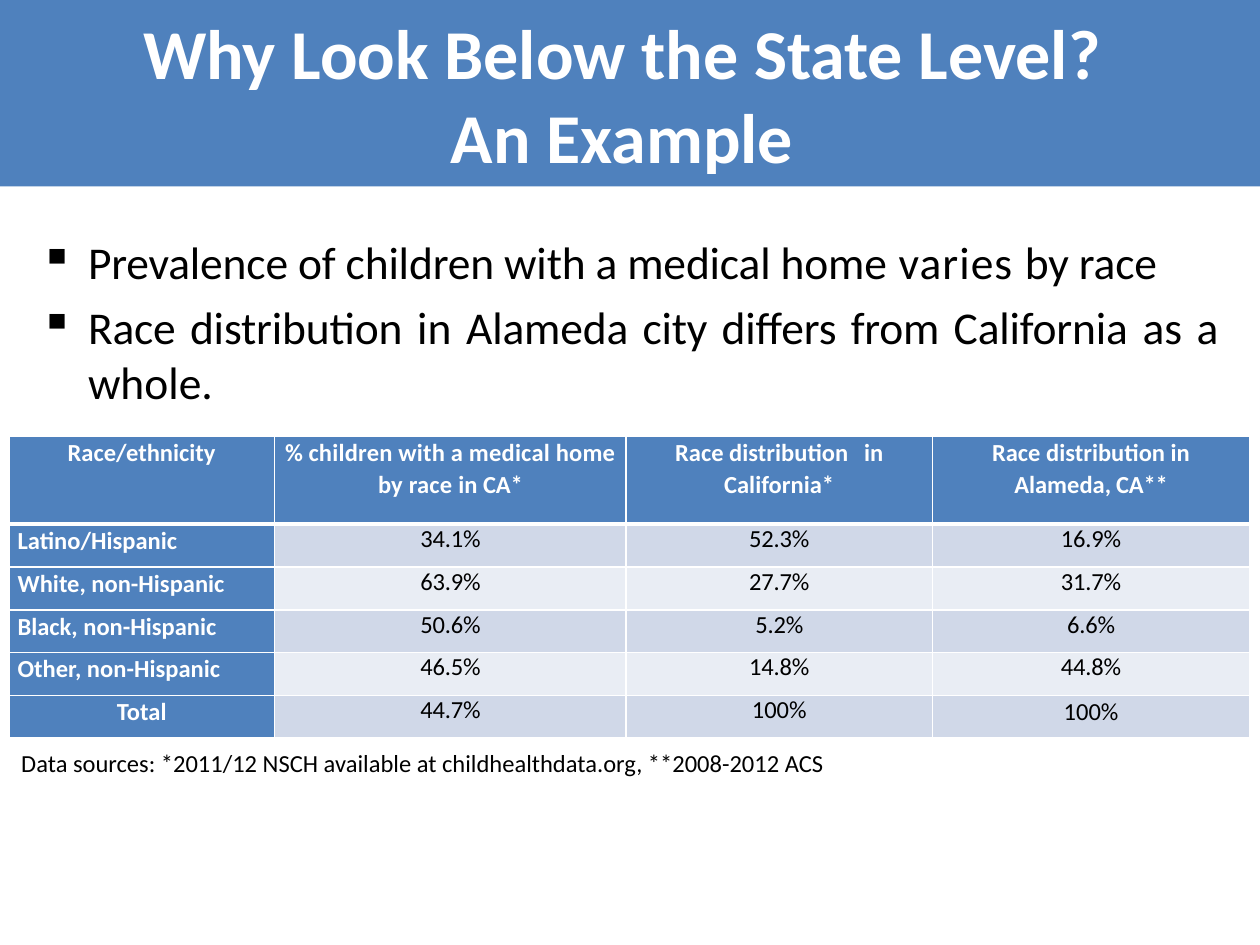
from pptx import Presentation
from pptx.dml.color import RGBColor
from pptx.enum.shapes import MSO_SHAPE as Shape
from pptx.enum.text import MSO_ANCHOR as Anchor, PP_ALIGN as Align
from pptx.oxml import parse_xml
from pptx.oxml.ns import nsdecls
from pptx.util import Inches, Pt

BLUE = RGBColor(0x4F, 0x81, 0xBD)
WHITE = RGBColor(0xFF, 0xFF, 0xFF)
BLACK = RGBColor(0, 0, 0)
DARK = RGBColor(0xD0, 0xD8, 0xE8)
LIGHT = RGBColor(0xE9, 0xED, 0xF4)


def add_run(para, text, size, color, bold=False, space=0):
    run = para.add_run()
    run.text = text
    font = run.font
    font.name, font.size, font.bold = "Calibri", Pt(size), bold
    font.color.rgb = color
    if space:
        run._r.get_or_add_rPr().set("spc", str(round(space * 100)))


def add_box(left, top, width, height):
    frame = slide.shapes.add_textbox(
        Inches(left), Inches(top), Inches(width), Inches(height)).text_frame
    frame.word_wrap = True
    return frame


deck = Presentation()
deck.slide_width, deck.slide_height = Inches(10), Inches(7.5)
slide = deck.slides.add_slide(deck.slide_layouts[6])

# Title band
band = slide.shapes.add_shape(
    Shape.RECTANGLE, Inches(0), Inches(0), Inches(10), Inches(1.48))
band.shadow.inherit = False
band.fill.solid()
band.fill.fore_color.rgb = BLUE
band.line.fill.background()
band.text_frame.vertical_anchor = Anchor.MIDDLE
para = band.text_frame.paragraphs[0]
para.alignment = Align.CENTER
add_run(para, "Why Look Below the State Level? ", 40, WHITE, True)
para.add_line_break()
add_run(para, "An Example ", 40, WHITE, True)

# Table
HEADS = [
    [("Race/ethnicity", 0)],
    [("% ", 0), ("children with a medical home by race ", 0.1),
     ("in ", 0), ("CA*", -0.1)],
    [("Race distribution\tin California*", 0)],
    [("Race distribution in Alameda", 0), (", CA", -0.2), ("**", -0.1)],
]
ROWS = [
    ("Latino/Hispanic", "34.1%", "52.3%", "16.9%"),
    ("White, non-Hispanic", "63.9%", "27.7%", "31.7%"),
    ("Black, non-Hispanic", "50.6%", "5.2%", "6.6%"),
    ("Other, non-Hispanic", "46.5%", "14.8%", "44.8%"),
    ("Total", "44.7%", "100%", "100%"),
]
grid = [HEADS] + [[[(text, 0 if n == 0 or text == "100%" else -0.1)]
                   for n, text in enumerate(row)] for row in ROWS]
last = len(ROWS)
table = slide.shapes.add_table(
    len(grid), 4, Inches(0.07), Inches(3.46), Inches(9.85), Inches(2.4)).table
table.horz_banding = False
for col, width in zip(table.columns, (2.11, 2.79, 2.43, 2.52)):
    col.width = Inches(width)
for r, row in enumerate(grid):
    table.rows[r].height = Inches(0.34 if r else 0.7)
    for c, parts in enumerate(row):
        cell = table.cell(r, c)
        cell.margin_left = cell.margin_right = Inches(0.07)
        cell.margin_top = cell.margin_bottom = 0
        head = r == 0 or c == 0
        # White borders, thicker under the header row
        for side in "LRTB":
            thick = (r, side) in ((0, "B"), (1, "T"))
            cell._tc.get_or_add_tcPr().append(parse_xml(
                f'<a:ln{side} {nsdecls("a")} w="{Pt(3 if thick else 1)}">'
                f'<a:solidFill><a:srgbClr val="{WHITE}"/></a:solidFill>'
                f'</a:ln{side}>'))
        cell.fill.solid()
        cell.fill.fore_color.rgb = BLUE if head else DARK if r % 2 else LIGHT
        para = cell.text_frame.paragraphs[0]
        label = c == 0 and 0 < r < last
        para.alignment = Align.LEFT if label else Align.CENTER
        if head or (r, c) == (last, 3):
            para.line_spacing = 1.07
        for text, space in parts:
            add_run(para, text, 14, WHITE if head else BLACK, head, space)

# Bullets
POINTS = [
    (Align.LEFT, [("Prevalence of children with a medical home", -0.1),
                  (" varies ", 0.6), ("by race", -0.1)]),
    (Align.JUSTIFY, [("Race distribution ", -0.1), ("in ", 0),
                     ("Alameda city differs from California ", -0.1),
                     ("as a whole.", 0)]),
]
frame = add_box(0.22, 1.81, 9.55, 1.5)
for n, (align, parts) in enumerate(POINTS):
    para = frame.add_paragraph() if n else frame.paragraphs[0]
    para.alignment = align
    para.space_after = Pt(6)
    props = para._p.get_or_add_pPr()
    props.set("marL", str(Inches(0.38)))
    props.set("indent", str(-Inches(0.38)))
    props.append(parse_xml(f'<a:buChar {nsdecls("a")} char="▪"/>'))
    for text, space in parts:
        add_run(para, text, 26, BLACK, space=space)

# Sources
para = add_box(0.07, 5.87, 9.06, 0.35).paragraphs[0]
para.line_spacing = 1.07
add_run(para, "Data sources: *2011/12 NSCH available at childhealthdata.org, "
        "**2008-2012 ACS", 14, BLACK)

deck.save("out.pptx")
